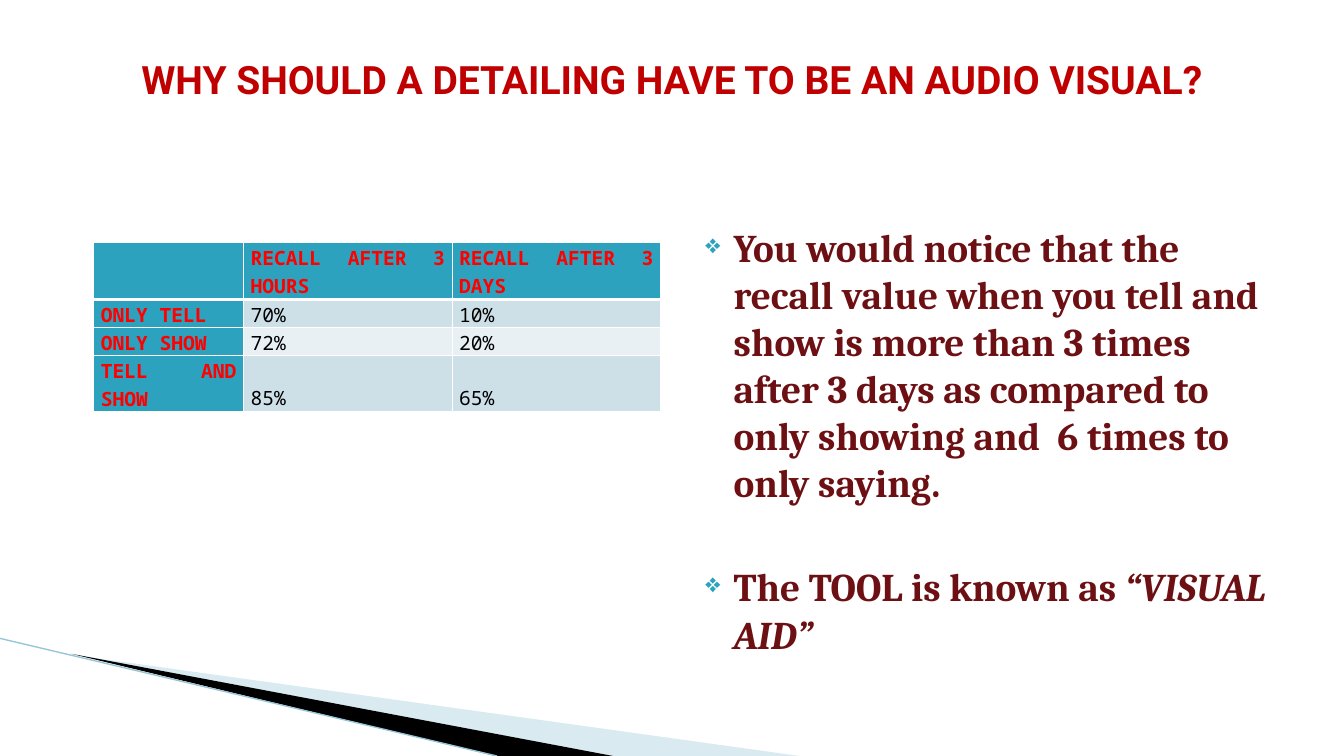
from lxml import etree
from pptx import Presentation
from pptx.dml.color import RGBColor
from pptx.enum import shapes, text
from pptx.oxml import ns
from pptx.util import Pt

COLORS = {
    "title": "C00000",
    "body": "6D1014",
    "accent": "2DA2BF",
    "label": "FF0000",
    "black": "000000",
    "white": "FFFFFF",
    "band_dark": "CDE0E8",
    "band_light": "E8F0F4",
    "wedge": "A0CBDC",
    "edge": "97C5D8",
}

RECALL = [
    ["", "RECALL AFTER 3 HOURS", "RECALL AFTER 3 DAYS"],
    ["ONLY TELL", "70%", "10%"],
    ["ONLY SHOW", "72%", "20%"],
    ["TELL AND SHOW", "85%", "65%"],
]

POINTS = [
    [("You would notice that the recall value when you tell and show is more "
      "than 3 times after 3 days as compared to only showing and  6 times to "
      "only saying.", False)],
    [("The TOOL is known as ", False), ("“VISUAL AID”", True)],
]


def rgb(name):
    return RGBColor.from_string(COLORS[name])


def add_child(parent, tag, **attributes):
    return etree.SubElement(parent, ns.qn(tag), attributes)


def add_span(para, words, font, size, color, bold=True, italic=False):
    span = para.add_run()
    span.text = words
    span.font.name = font
    span.font.size = Pt(size)
    span.font.bold = bold
    span.font.italic = italic
    span.font.color.rgb = rgb(color)


def add_box(page, left, top, width, height):
    box = page.shapes.add_textbox(Pt(left), Pt(top), Pt(width), Pt(height))
    box.text_frame.word_wrap = True
    return box.text_frame


def add_wedge(page, corners, color, opacity=100):
    start, *rest = corners
    builder = page.shapes.build_freeform(*start, scale=Pt(1))
    builder.add_line_segments(rest)
    wedge = builder.convert_to_shape()
    wedge.shadow.inherit = False
    wedge.line.fill.background()
    wedge.fill.solid()
    wedge.fill.fore_color.rgb = rgb(color)
    if opacity < 100:
        tint = wedge.fill._xPr.find(".//" + ns.qn("a:srgbClr"))
        add_child(tint, "a:alpha", val=str(opacity * 1000))


def add_edge(page, start, end):
    edge = page.shapes.add_connector(
        shapes.MSO_CONNECTOR.STRAIGHT, *map(Pt, start + end))
    edge.line.color.rgb = rgb("edge")
    edge.line.width = Pt(0.95)
    add_child(edge._element.spPr, "a:effectLst")


def add_title(page, words):
    frame = add_box(page, 48, 36, 864, 116)
    para = frame.paragraphs[0]
    para.alignment = text.PP_ALIGN.CENTER
    add_span(para, words, "Roboto", 27.9, "title")


def add_bullet(para):
    props = para._p.get_or_add_pPr()
    props.set("marL", str(Pt(28.8)))
    props.set("indent", str(Pt(-20.2)))
    tint = add_child(props, "a:buClr")
    add_child(tint, "a:srgbClr", val=COLORS["accent"])
    add_child(props, "a:buSzPct", val="68000")
    add_child(props, "a:buChar", char="❖")


def add_points(page, points):
    frame = add_box(page, 488.2, 156, 424, 317)
    for index, spans in enumerate(points):
        para = frame.add_paragraph() if index else frame.paragraphs[0]
        add_bullet(para)
        if index:
            para.space_before = Pt(40.7)
        for words, italic in spans:
            add_span(para, words, "Cambria", 28, "body", italic=italic)


def set_borders(cell, bottom):
    props = cell._tc.get_or_add_tcPr()
    widths = {"a:lnL": 1, "a:lnR": 1, "a:lnT": 1, "a:lnB": bottom}
    for index, (tag, width) in enumerate(widths.items()):
        border = etree.Element(ns.qn(tag), w=str(Pt(width)))
        fill = add_child(border, "a:solidFill")
        add_child(fill, "a:srgbClr", val=COLORS["white"])
        props.insert(index, border)


def fill_cell(cell, words, fill, is_label, bottom):
    cell.fill.solid()
    cell.fill.fore_color.rgb = rgb(fill)
    set_borders(cell, bottom)
    cell.vertical_anchor = text.MSO_ANCHOR.BOTTOM
    cell.margin_left = cell.margin_right = Pt(5)
    cell.margin_top = cell.margin_bottom = Pt(0)
    if words:
        para = cell.text_frame.paragraphs[0]
        para.alignment = text.PP_ALIGN.JUSTIFY
        para.line_spacing = 1.06
        color = "label" if is_label else "black"
        add_span(para, words, "Noto Sans Mono", 14, color, bold=is_label)


def add_recall_table(page, rows):
    widths, heights = [107, 149, 149], [41, 20, 20, 40]
    table = page.shapes.add_table(
        len(rows), len(widths), Pt(67), Pt(173),
        Pt(sum(widths)), Pt(sum(heights))).table
    for column, width in zip(table.columns, widths):
        column.width = Pt(width)
    for r, row in enumerate(rows):
        table.rows[r].height = Pt(heights[r])
        band = "band_dark" if r % 2 else "band_light"
        for c, words in enumerate(row):
            is_label = r == 0 or c == 0
            fill_cell(table.cell(r, c), words, "accent" if is_label else band,
                      is_label, 3 if r == 0 else 1)


def main():
    deck = Presentation()
    deck.slide_width, deck.slide_height = Pt(960), Pt(540)
    page = deck.slides.add_slide(deck.slide_layouts[6])
    add_wedge(page, [(52.6, 468.4), (571, 540), (437.8, 540)], "wedge", 40)
    add_wedge(page, [(51.2, 467.4), (437.8, 540), (354, 540)], "black")
    add_edge(page, (0, 456), (355, 540))
    add_points(page, POINTS)
    add_title(page, "WHY SHOULD A DETAILING HAVE TO BE AN AUDIO VISUAL?")
    add_recall_table(page, RECALL)
    deck.save("out.pptx")


if __name__ == "__main__":
    main()
